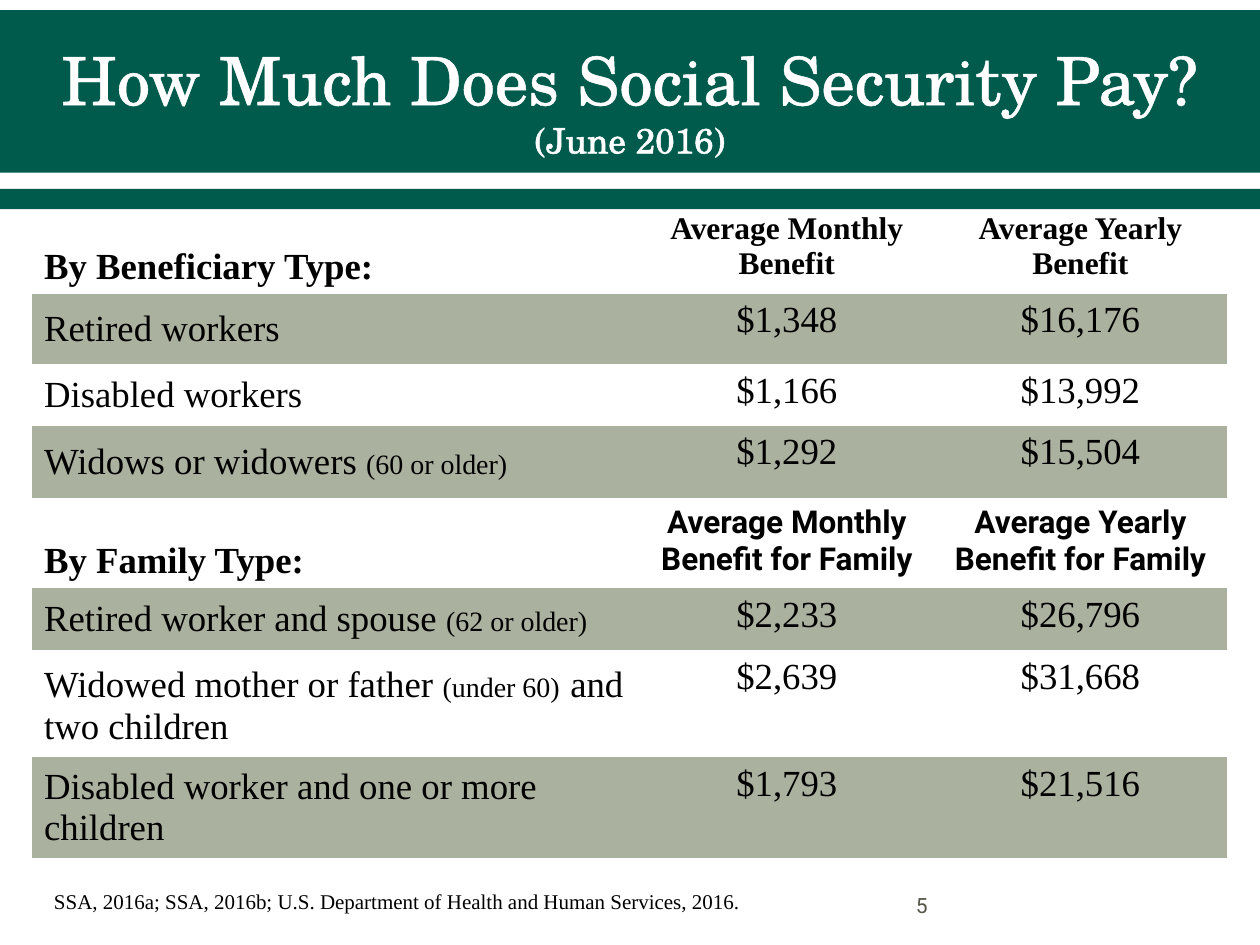
import pptx
import pptx.dml.color
import pptx.enum.shapes
import pptx.enum.text
import pptx.oxml
import pptx.oxml.ns
import pptx.util

ALIGN = pptx.enum.text.PP_ALIGN
ANCHOR = pptx.enum.text.MSO_ANCHOR
WIDTH, HEIGHT = 10, 7.5

THEME = {
    "green": "005B4D", "sage": "ABB19F", "white": "FFFFFF",
    "black": "000000", "gray": "55554A",
    "serif": "Times New Roman", "sans": "Roboto", "display": "TeX Gyre Schola",
    "title": 38, "subtitle": 20, "body": 21, "heading": 18,
    "gap": 24, "note": 16, "footer": 12,
}
NO_GRID_STYLE = "{2D5ABB26-0587-4C30-8999-92F81FD0307C}"

COLUMN_WIDTHS = [4.83, 2.33, 2.33]
ROW_HEIGHTS = [0.75, 0.56, 0.49, 0.57, 0.72, 0.49, 0.57, 0.79]

# Each section: label, column headings, heading font and anchor, benefit rows.
# A label is a list of (text, size name) pieces.
SECTIONS = [
    ("By Beneficiary Type:",
     ["Average Monthly Benefit", "Average Yearly Benefit"], "serif", ANCHOR.MIDDLE,
     [([("Retired workers", "body")], "$1,348", "$16,176"),
      ([("Disabled workers", "body")], "$1,166", "$13,992"),
      ([("Widows or widowers ", "body"), ("(60 or older)", "note")],
       "$1,292", "$15,504")]),
    ("By Family Type:",
     ["Average Monthly Benefit for Family", "Average Yearly Benefit for Family"],
     "sans", ANCHOR.TOP,
     [([("Retired worker and spouse ", "body"), ("(62 or older)", "note")],
       "$2,233", "$26,796"),
      ([("Widowed mother or father ", "body"), ("(under 60)", "note"),
        (" ", "gap"), ("and two children", "body")], "$2,639", "$31,668"),
      ([("Disabled worker and one or more children", "body")],
       "$1,793", "$21,516")]),
]


def color(name):
    return pptx.dml.color.RGBColor.from_string(THEME[name])


def box(left, top, width, height):
    return [pptx.util.Inches(value) for value in (left, top, width, height)]


def set_attributes(target, values):
    for name, value in values.items():
        setattr(target, name, value)


def add_run(paragraph, text, size, font="serif", color_name="black", bold=False):
    run = paragraph.add_run()
    run.text = text
    set_attributes(run.font, {"size": pptx.util.Pt(THEME[size]),
                              "name": THEME[font], "bold": bold})
    run.font.color.rgb = color(color_name)
    return run


def add_band(slide, top, height):
    shape = slide.shapes.add_shape(pptx.enum.shapes.MSO_SHAPE.RECTANGLE,
                                   *box(0, top, WIDTH, height))
    shape.shadow.inherit = False
    shape.fill.solid()
    shape.fill.fore_color.rgb = color("green")
    shape.line.fill.background()


def outline_run(run):
    line = pptx.oxml.parse_xml(
        f'<a:ln {pptx.oxml.ns.nsdecls("a")} w="{pptx.util.Pt(1.1)}"><a:solidFill>'
        f'<a:srgbClr val="{THEME["white"]}"/></a:solidFill></a:ln>')
    run.font._element.insert(0, line)


def format_title(slide):
    title = slide.shapes.title
    # Bring the placeholder in front of the bands
    slide.shapes._spTree.append(title._element)
    set_attributes(title, dict(zip(("left", "top", "width", "height"),
                                   box(0, 0.25, WIDTH, 1.08))))
    set_attributes(title.text_frame, {"word_wrap": True,
                                      "vertical_anchor": ANCHOR.MIDDLE})
    paragraph = title.text_frame.paragraphs[0]
    paragraph.alignment = ALIGN.CENTER
    outline_run(add_run(paragraph, "How Much Does Social Security Pay?",
                        "title", "display", "white"))
    paragraph.add_line_break()
    outline_run(add_run(paragraph, "(June 2016)", "subtitle", "display", "white"))


def add_text(slide, bounds, text, anchor, font, color_name):
    frame = slide.shapes.add_textbox(*box(*bounds)).text_frame
    set_attributes(frame, {"word_wrap": True, "vertical_anchor": anchor})
    add_run(frame.paragraphs[0], text, "footer", font, color_name)


def fill_cell(cell, pieces, anchor, align=ALIGN.LEFT, shaded=False, **font):
    cell.vertical_anchor = anchor
    if shaded:
        cell.fill.solid()
        cell.fill.fore_color.rgb = color("sage")
    else:
        cell.fill.background()
    paragraph = cell.text_frame.paragraphs[0]
    paragraph.alignment = align
    for text, size in pieces:
        add_run(paragraph, text, size, **font)


def add_benefit_table(slide):
    frame = slide.shapes.add_table(
        len(ROW_HEIGHTS), len(COLUMN_WIDTHS),
        *box(0.25, 1.58, sum(COLUMN_WIDTHS), sum(ROW_HEIGHTS)))
    table = frame.table
    set_attributes(table, {"first_row": False, "horz_banding": False})
    style = table._tbl.tblPr.find(pptx.oxml.ns.qn("a:tableStyleId"))
    style.text = NO_GRID_STYLE
    for column, width in zip(table.columns, COLUMN_WIDTHS):
        column.width = pptx.util.Inches(width)
    for row, height in zip(table.rows, ROW_HEIGHTS):
        row.height = pptx.util.Inches(height)

    rows = iter(table.rows)
    for label, headings, font, anchor, benefits in SECTIONS:
        # Section heading
        first, *others = next(rows).cells
        fill_cell(first, [(label, "body")], ANCHOR.BOTTOM, bold=True)
        for cell, heading in zip(others, headings):
            fill_cell(cell, [(heading, "heading")], anchor, ALIGN.CENTER,
                      font=font, bold=True)
        # Benefit rows, every other one shaded
        for index, (pieces, *amounts) in enumerate(benefits):
            shaded = index % 2 == 0
            first, *others = next(rows).cells
            fill_cell(first, pieces, ANCHOR.MIDDLE, shaded=shaded)
            for cell, amount in zip(others, amounts):
                fill_cell(cell, [(amount, "body")], ANCHOR.TOP, ALIGN.CENTER, shaded)


def main():
    presentation = pptx.Presentation()
    set_attributes(presentation, {"slide_width": pptx.util.Inches(WIDTH),
                                  "slide_height": pptx.util.Inches(HEIGHT)})
    slide = presentation.slides.add_slide(presentation.slide_layouts[5])

    # Title bands and title
    for top, height in ((0.08, 1.29), (1.5, 0.16)):
        add_band(slide, top, height)
    format_title(slide)

    # Page number and sources
    add_text(slide, (7.17, 7, 1.92, 0.36), "5", ANCHOR.MIDDLE, "sans", "gray")
    add_text(slide, (0.33, 7, 5.75, 0.3),
             "SSA, 2016a; SSA, 2016b; U.S. Department of Health and Human Services, 2016.",
             ANCHOR.TOP, "serif", "black")

    add_benefit_table(slide)
    presentation.save("out.pptx")


if __name__ == "__main__":
    main()
